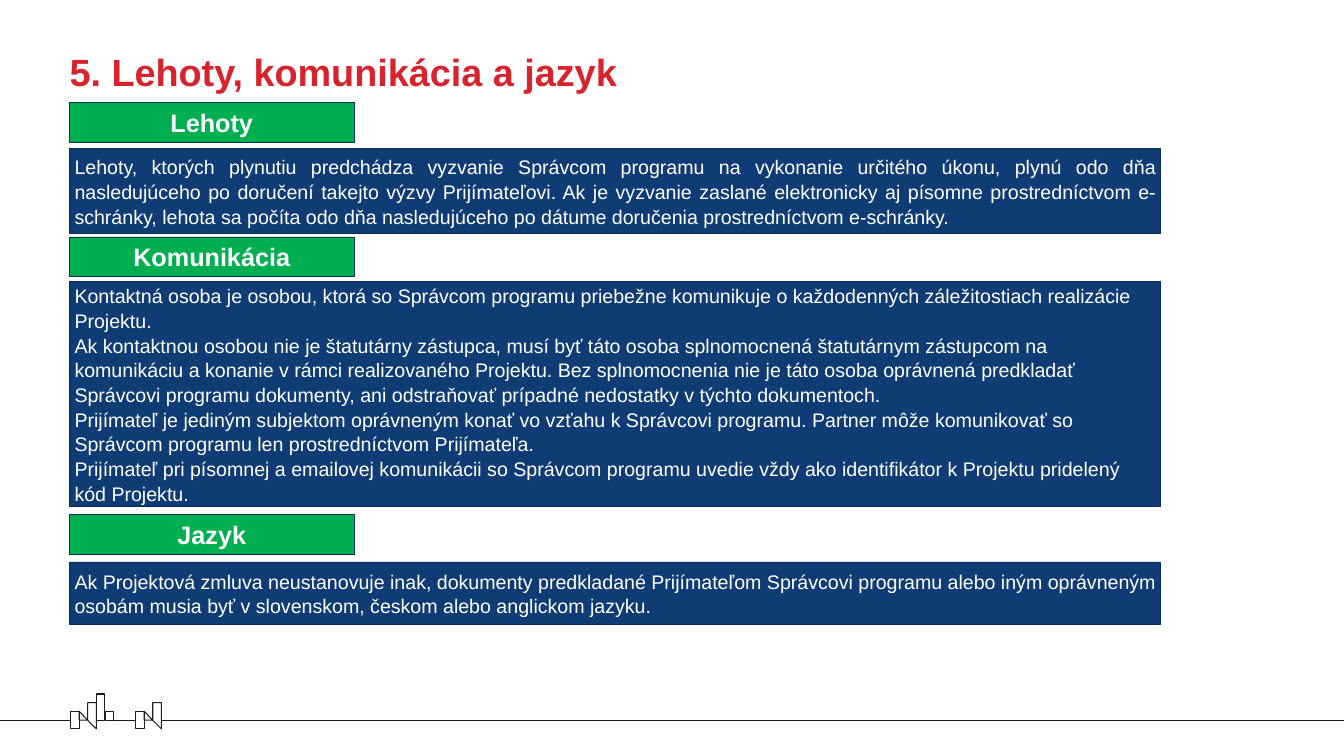
from pptx import Presentation
from pptx.dml.color import RGBColor
from pptx.enum.shapes import MSO_CONNECTOR as CONN, MSO_SHAPE as SHAPE
from pptx.enum.text import MSO_ANCHOR as ANCHOR, MSO_AUTO_SIZE as FIT, PP_ALIGN as ALIGN
from pptx.oxml.ns import qn
from pptx.util import Inches, Pt
from lxml.etree import SubElement

RED = RGBColor(0xD8, 0x22, 0x2C)
GREEN = RGBColor(0x00, 0xB0, 0x50)
BLUE = RGBColor(0x0F, 0x3C, 0x74)
EDGE = RGBColor(0x0B, 0x2C, 0x56)
INK = RGBColor(0x1D, 0x1E, 0x1C)
WHITE = RGBColor(0xFF, 0xFF, 0xFF)

TITLE = "5. Lehoty, komunikácia a jazyk"
SECTIONS = [
    ("Lehoty", 2.03, 2.95, 1.69, ALIGN.JUSTIFY, [
        "Lehoty, ktorých plynutiu predchádza vyzvanie Správcom programu na vykonanie určitého úkonu, plynú odo dňa nasledujúceho po doručení takejto výzvy Prijímateľovi. Ak je vyzvanie zaslané elektronicky aj písomne prostredníctvom e-schránky, lehota sa počíta odo dňa nasledujúceho po dátume doručenia prostredníctvom e-schránky.",
    ]),
    ("Komunikácia", 4.7, 5.59, 4.46, ALIGN.LEFT, [
        "Kontaktná osoba je osobou, ktorá so Správcom programu priebežne komunikuje o každodenných záležitostiach realizácie Projektu.",
        "Ak kontaktnou osobou nie je štatutárny zástupca, musí byť táto osoba splnomocnená štatutárnym zástupcom na komunikáciu a konanie v rámci realizovaného Projektu. Bez splnomocnenia nie je táto osoba oprávnená predkladať Správcovi programu dokumenty, ani odstraňovať prípadné nedostatky v týchto dokumentoch.",
        "Prijímateľ je jediným subjektom oprávneným konať vo vzťahu k Správcovi programu. Partner môže komunikovať so Správcom programu len prostredníctvom Prijímateľa.",
        "Prijímateľ pri písomnej a emailovej komunikácii so Správcom programu uvedie vždy ako identifikátor k Projektu pridelený kód Projektu.",
    ]),
    ("Jazyk", 10.2, 11.15, 1.24, ALIGN.LEFT, [
        "Ak Projektová zmluva neustanovuje inak, dokumenty predkladané Prijímateľom Správcovi programu alebo iným oprávneným osobám musia byť v slovenskom, českom alebo anglickom jazyku.",
    ]),
]
LEFT, LABEL_W, LABEL_H, BODY_W = 1.38, 5.64, 0.79, 21.64
TITLE_FONT = {"name": "Arial", "size": Pt(54), "bold": True}
LABEL_FONT = {"name": "Arial", "size": Pt(36), "bold": True}
BODY_FONT = {"name": "Arial", "size": Pt(28), "bold": False}

GROUND, UNIT = 14.29, 0.17
GABLES = [1.4, 2.69]
HOUSES = [(1.91, 13.77, 0.52), (2.09, 14.11, 0.18)]
GROUND_LINES = [(0.01, 1.4), (2.26, 2.69), (3.2, 26.65)]


def style_font(font, values, color):
    for key, value in values.items():
        setattr(font, key, value)
    font.color.rgb = color


def outline(s, color, width):
    s.line.color.rgb = color
    s.line.width = Pt(width)


def add_rect(sp, left, top, width, height):
    s = sp.add_shape(SHAPE.RECTANGLE, Inches(left), Inches(top), Inches(width), Inches(height))
    s.shadow.inherit = False
    return s


def add_box(sp, top, width, height, fill, texts, align, font, spacing):
    s = add_rect(sp, LEFT, top, width, height)
    s.fill.solid()
    s.fill.fore_color.rgb = fill
    outline(s, EDGE, 1)
    tf = s.text_frame
    tf.word_wrap = True
    tf.vertical_anchor = ANCHOR.MIDDLE
    for i, text in enumerate(texts):
        p = tf.add_paragraph() if i else tf.paragraphs[0]
        p.alignment = align
        p.line_spacing = spacing
        r = p.add_run()
        r.text = text
        style_font(r.font, font, WHITE)


def add_house(sp, left, top, height):
    s = add_rect(sp, left, top, UNIT, height)
    s.fill.background()
    outline(s, INK, 1.5)


def add_outline(sp, points):
    start, *rest = [(Inches(x), Inches(y)) for x, y in points]
    fb = sp.build_freeform(*start, scale=1.0)
    fb.add_line_segments(rest, close=True)
    s = fb.convert_to_shape()
    s.shadow.inherit = False
    s.fill.background()
    outline(s, INK, 1.5)


def add_gable(sp, left):
    eave, peak, base = GROUND - 0.18, GROUND - 0.35, GROUND + UNIT
    x1, x2, x3 = [left + UNIT * n for n in (1, 2, 3)]
    add_house(sp, left, eave, 0.35)
    add_outline(sp, [(x2, GROUND), (x1, GROUND), (x1, eave)])
    add_outline(sp, [(x2, peak), (x2, GROUND), (x3, base), (x3, peak)])


def add_ground(sp, start, end):
    s = sp.add_connector(CONN.STRAIGHT, Inches(start), Inches(GROUND), Inches(end), Inches(GROUND))
    outline(s, INK, 1.5)
    SubElement(s._element.spPr, qn("a:effectLst"))


def add_title(s):
    s.left, s.top, s.width, s.height = [Inches(v) for v in (LEFT, 0.88, 23.91, 1.82)]
    tf = s.text_frame
    margins = {"margin_left": 0, "margin_right": 0, "margin_top": Inches(0.08), "margin_bottom": 0}
    for key, value in margins.items():
        setattr(tf, key, value)
    tf.auto_size = FIT.NONE
    tf.word_wrap = True
    tf.vertical_anchor = ANCHOR.TOP
    p = tf.paragraphs[0]
    p.alignment = ALIGN.LEFT
    r = p.add_run()
    r.text = TITLE
    style_font(r.font, TITLE_FONT, RED)


def main():
    prs = Presentation()
    prs.slide_width, prs.slide_height = Inches(26.66), Inches(15)
    slide = prs.slides.add_slide(prs.slide_layouts[5])
    sp = slide.shapes
    for left in GABLES:
        add_gable(sp, left)
    for house in HOUSES:
        add_house(sp, *house)
    for ends in GROUND_LINES:
        add_ground(sp, *ends)
    add_title(sp.title)
    for label, label_top, body_top, body_h, align, texts in SECTIONS:
        add_box(sp, label_top, LABEL_W, LABEL_H, GREEN, [label], ALIGN.CENTER, LABEL_FONT, 1.0)
        add_box(sp, body_top, BODY_W, body_h, BLUE, texts, align, BODY_FONT, 1.05)
    prs.save("out.pptx")


if __name__ == "__main__":
    main()
